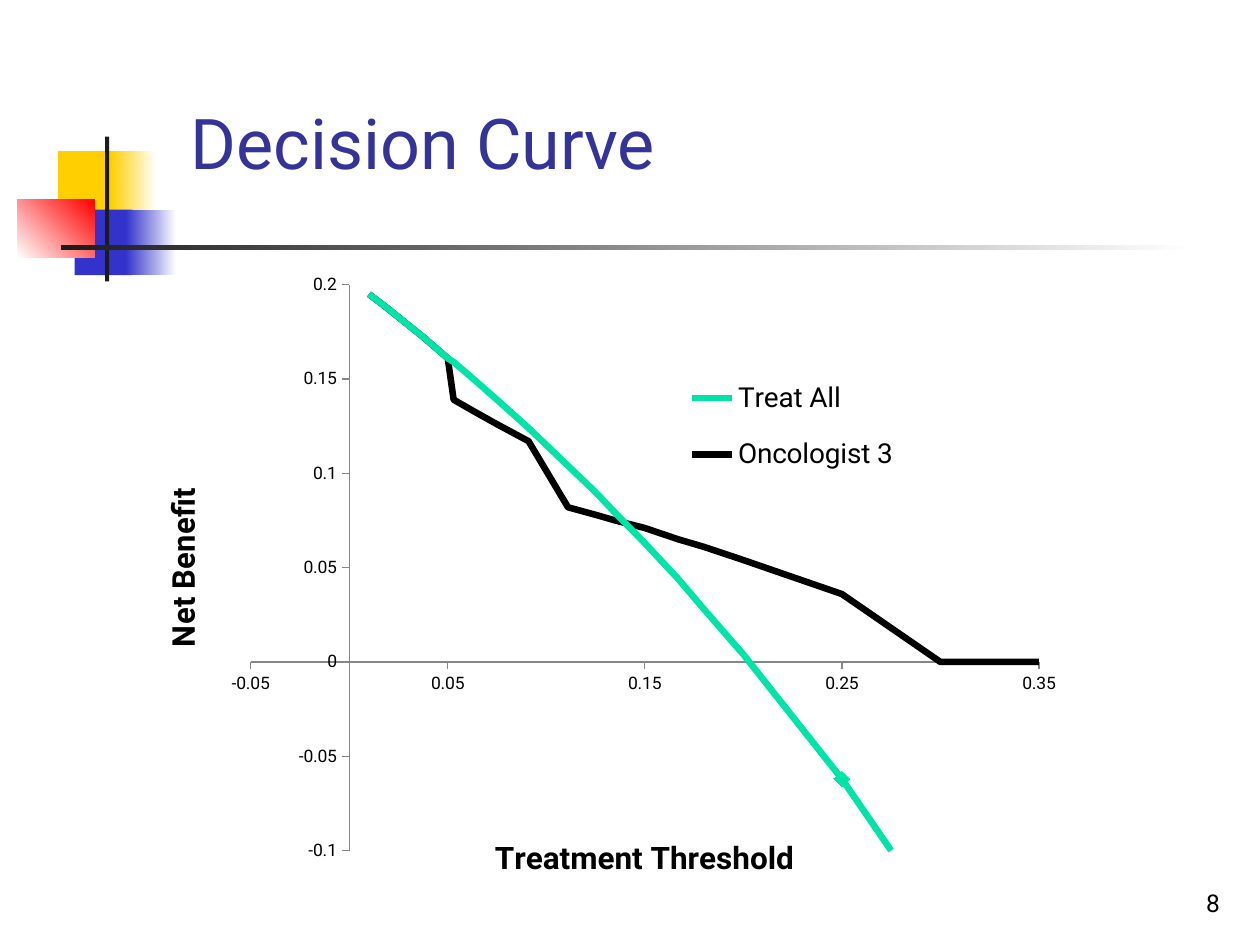
"""Builds the decision curve slide: title, corner ornament and scatter chart."""
from lxml import etree
from pptx import Presentation
from pptx import util as u
from pptx.chart.data import XyChartData
from pptx.dml.color import RGBColor
from pptx.enum import chart as ch, shapes, text
from pptx.oxml import ns

W, H = 10, 7.5
FONT = "Roboto"
C = {"gold": "FFCF01", "blue": "3333CC", "red": "FF0000", "white": "FFFFFF",
     "ink": "1C1C1C", "title": "333399", "black": "000000", "green": "00E4A8",
     "axis": "868686"}

# (left, top, width, height) in percent of the slide, colours, gradient angle
ORNAMENT = [
    ((4.6, 16, 4.8, 6.93), ("gold",), 0),
    ((8.8, 16, 3.6, 6.93), ("gold", "white"), 0),
    ((5.92, 22.2, 4.6, 6.93), ("blue",), 0),
    ((10, 22.2, 4, 6.93), ("blue", "white"), 0),
    ((1.4, 21.1, 6.1, 6.2), ("white", "red"), 45),
    ((8.34, 14.45, 0.33, 15.33), ("ink",), 0),
    ((4.84, 25.95, 90, 0.5), ("ink", "white"), 0),
]
TEXTS = [
    ("8", (77, 91.07, 20.8, 6.67), 14, "black",
     text.PP_ALIGN.RIGHT, text.MSO_ANCHOR.BOTTOM),
    ("Decision Curve", (14.15, 6.67, 90, 16.67), 40, "title",
     text.PP_ALIGN.LEFT, text.MSO_ANCHOR.MIDDLE),
]
CHART_BOX = (10.2, 27.73, 79.5, 66.13)
THRESHOLDS = [0.5, 0.45, 0.4, 0.35, 0.33, 0.3, 0.25, 0.2, 0.18, 0.167, 0.15, 0.135,
              0.125, 0.111, 0.091, 0.075, 0.063, 0.053, 0.05, 0.04, 0.039, 0.02, 0.01]
SERIES = {
    "Treat All": ("green", [None, *THRESHOLDS], [
        None, -0.593, -0.448, -0.328, -0.226, -0.195, -0.138, -0.062, 0.004, 0.028,
        0.044, 0.063, 0.079, 0.09, 0.104, 0.124, 0.139, 0.15, 0.159, 0.161, 0.17,
        0.171, 0.187, 0.195]),
    "Oncologist 3": ("black", THRESHOLDS, [
        0, 0, 0, 0, 0, 0, 0.036, 0.054, 0.061, 0.065, 0.071, 0.075, 0.078, 0.082,
        0.117, 0.126, 0.133, 0.139, 0.161, 0.17, 0.171, 0.187, 0.195]),
}
MARKED = ("Treat All", 0.25)
AXES = {
    "category_axis": ("Treatment Threshold", (0.36, 0.93), {
        "minimum_scale": -0.05, "maximum_scale": 0.35, "major_unit": 0.1}),
    "value_axis": ("Net Benefit", (0.028, 0.364), {
        "minimum_scale": -0.1, "maximum_scale": 0.2, "major_unit": 0.05}),
}
AXIS_FORMAT = {"has_major_gridlines": False, "has_minor_gridlines": False,
               "major_tick_mark": ch.XL_TICK_MARK.OUTSIDE,
               "minor_tick_mark": ch.XL_TICK_MARK.NONE,
               "tick_label_position": ch.XL_TICK_LABEL_POSITION.NEXT_TO_AXIS}
PLOT_LAYOUT = (0.122, 0.037, 0.787, 0.923)
LEGEND_LAYOUT = (0.543, 0.155, 0.24, 0.226)


def rgb(name):
    return RGBColor.from_string(C[name])


def place(box):
    return [u.Inches(share * side / 100) for share, side in zip(box, (W, H, W, H))]


def set_all(obj, values):
    for key, value in values.items():
        setattr(obj, key, value)


def style(font, size, color="black", bold=False):
    set_all(font, {"name": FONT, "size": u.Pt(size), "bold": bold})
    font.color.rgb = rgb(color)


def set_layout(parent, shares, inner=False):
    for old in parent.findall(ns.qn("c:layout")):
        parent.remove(old)
    layout = etree.Element(ns.qn("c:layout"))
    manual = etree.SubElement(layout, ns.qn("c:manualLayout"))
    values = [("layoutTarget", "inner")] if inner else []
    values += [("xMode", "edge"), ("yMode", "edge"), *zip("xywh", shares)]
    for tag, value in values:
        etree.SubElement(manual, ns.qn("c:" + tag)).set("val", str(value))
    overlay = parent.find(ns.qn("c:overlay"))
    if overlay is None:
        parent.insert(0, layout)
    else:
        overlay.addprevious(layout)


def drop_empty_points(chart):
    for pt in list(chart._chartSpace.iter(ns.qn("c:pt"))):
        if pt.findtext(ns.qn("c:v")) in (None, "", "None"):
            pt.getparent().remove(pt)


def add_ornament(s):
    for box, colors, angle in ORNAMENT:
        sp = s.shapes.add_shape(shapes.MSO_SHAPE.RECTANGLE, *place(box))
        sp.shadow.inherit = False
        sp.line.fill.background()
        if len(colors) == 1:
            sp.fill.solid()
            sp.fill.fore_color.rgb = rgb(colors[0])
        else:
            sp.fill.gradient()
            sp.fill.gradient_angle = angle
            for stop, color in zip(sp.fill.gradient_stops, colors):
                stop.color.rgb = rgb(color)


def add_texts(s):
    for words, box, size, color, align, anchor in TEXTS:
        tf = s.shapes.add_textbox(*place(box)).text_frame
        set_all(tf, {"word_wrap": True, "vertical_anchor": anchor})
        p = tf.paragraphs[0]
        p.alignment = align
        r = p.add_run()
        r.text = words
        style(r.font, size, color)


def add_curves(s):
    data = XyChartData()
    for name, (_, thresholds, benefits) in SERIES.items():
        series = data.add_series(name)
        for point in zip(thresholds, benefits):
            series.add_data_point(*point)
    chart = s.shapes.add_chart(ch.XL_CHART_TYPE.XY_SCATTER_LINES_NO_MARKERS,
                               *place(CHART_BOX), data).chart
    drop_empty_points(chart)
    set_all(chart, {"has_title": False, "has_legend": True})
    style(chart.font, 10)
    chart.plots[0].vary_by_categories = False

    for series in chart.plots[0].series:
        color_name, thresholds, _ = SERIES[series.name]
        color = rgb(color_name)
        series.smooth = False
        series.format.line.width = u.Pt(3.75)
        series.format.line.color.rgb = color
        if series.name == MARKED[0]:
            marker = series.points[thresholds.index(MARKED[1])].marker
            set_all(marker, {"style": ch.XL_MARKER_STYLE.DIAMOND, "size": 9})
            marker.format.fill.solid()
            marker.format.fill.fore_color.rgb = color
            marker.format.line.color.rgb = color

    for attr, (words, spot, scale) in AXES.items():
        axis = getattr(chart, attr)
        set_all(axis, {**AXIS_FORMAT, **scale})
        set_all(axis.tick_labels, {"number_format": "General",
                                   "number_format_is_linked": False})
        axis.format.line.color.rgb = rgb("axis")
        title = axis.axis_title
        r = title.text_frame.paragraphs[0].add_run()
        r.text = words
        style(r.font, 18, bold=True)
        set_layout(title._element, spot)

    legend = chart.legend
    set_all(legend, {"position": ch.XL_LEGEND_POSITION.RIGHT, "include_in_layout": False})
    style(legend.font, 16)
    set_layout(legend._element, LEGEND_LAYOUT)
    set_layout(chart._chartSpace.chart.plotArea, PLOT_LAYOUT, inner=True)


def main():
    prs = Presentation()
    set_all(prs, {"slide_width": u.Inches(W), "slide_height": u.Inches(H)})
    s = prs.slides.add_slide(prs.slide_layouts[6])
    add_ornament(s)
    add_texts(s)
    add_curves(s)
    prs.save("out.pptx")


if __name__ == "__main__":
    main()
